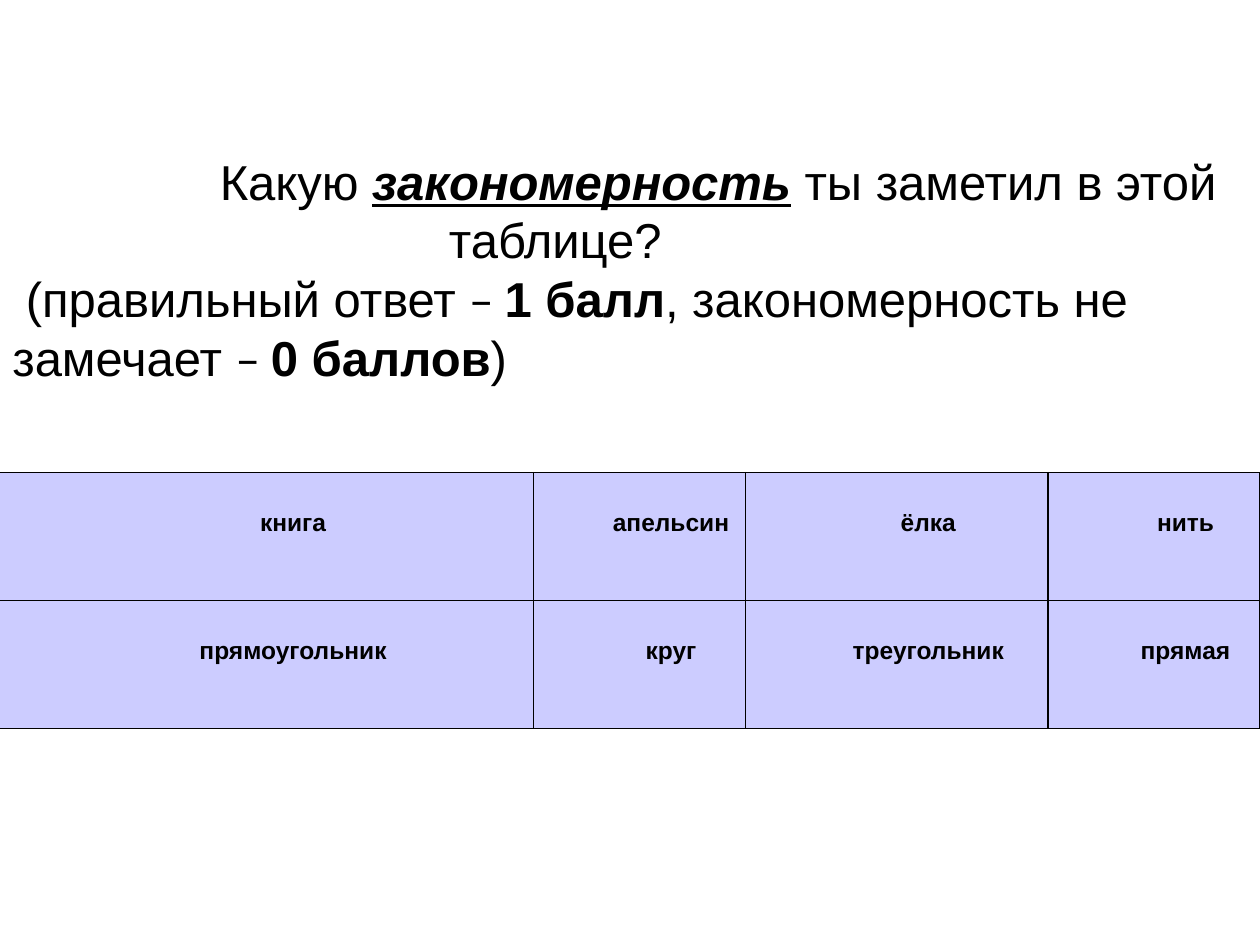
"""Build a slide with a question and a table of objects and their shapes."""
from typing import NamedTuple

from lxml.etree import SubElement as Sub
from pptx import Presentation as Deck
from pptx.dml.color import RGBColor as Rgb
from pptx.enum.text import MSO_ANCHOR as Anchor, MSO_AUTO_SIZE as Fit, PP_ALIGN as Align
from pptx.oxml.ns import qn
from pptx.util import Pt

BLACK = Rgb(0x00, 0x00, 0x00)
LILAC = Rgb(0xCC, 0xCC, 0xFF)


class Piece(NamedTuple):
    text: str
    size: float = 28
    font: str = "Arial"
    bold: bool = False
    mark: bool = False


class Para(NamedTuple):
    pieces: list[Piece]
    left: float = 0
    first: float = 0
    align: Align = Align.LEFT


DASH = Piece("– ", font="Calibri")
ASK = [
    Para([Piece("Какую "), Piece("закономерность", bold=True, mark=True),
          Piece(" ты заметил в этой таблице?")], left=249.5, first=-131),
    Para([Piece(" (правильный ответ "), DASH, Piece("1 балл", bold=True),
          Piece(", закономерность не замечает "), DASH,
          Piece("0 баллов", bold=True), Piece(")")]),
]
WORDS = [
    ["книга", "апельсин", "ёлка", "нить"],
    ["прямоугольник", "круг", "треугольник", "прямая"],
]
WIDTHS = [311, 121, 173, 121]
HIGH = 73.15


def write(para, data: Para) -> None:
    para.alignment = data.align
    props = para._p.get_or_add_pPr()
    props.set("marL", str(Pt(data.left)))
    props.set("indent", str(Pt(data.first)))
    for piece in data.pieces:
        run = para.add_run()
        run.text = piece.text
        font = run.font
        font.size, font.name = Pt(piece.size), piece.font
        font.bold, font.italic, font.underline = piece.bold, piece.mark, piece.mark
        font.color.rgb = BLACK


def edge(cell) -> None:
    props = cell._tc.get_or_add_tcPr()
    for side in ("lnL", "lnR", "lnT", "lnB"):
        line = Sub(props, qn(f"a:{side}"), w=str(Pt(1)))
        Sub(Sub(line, qn("a:solidFill")), qn("a:srgbClr"), val=str(BLACK))


def fill(cell, word: str) -> None:
    edge(cell)
    cell.fill.solid()
    cell.fill.fore_color.rgb = LILAC
    cell.margin_left = cell.margin_right = Pt(5)
    cell.margin_top, cell.margin_bottom = Pt(18.5), Pt(0)
    para = cell.text_frame.paragraphs[0]
    para.line_spacing = 1.15
    write(para, Para([Piece(word, size=14, bold=True)], left=36, align=Align.CENTER))


def grid(slide) -> None:
    rows = len(WORDS)
    table = slide.shapes.add_table(rows, len(WIDTHS), Pt(-6), Pt(270),
                                   Pt(sum(WIDTHS)), Pt(HIGH * rows)).table
    table.first_row = table.horz_banding = False
    for col, width in zip(table.columns, WIDTHS):
        col.width = Pt(width)
    for row, words in zip(table.rows, WORDS):
        row.height = Pt(HIGH)
        for cell, word in zip(row.cells, words):
            fill(cell, word)


def title(slide) -> None:
    frame = slide.shapes.add_textbox(Pt(0), Pt(82), Pt(720), Pt(143)).text_frame
    frame.word_wrap = True
    frame.auto_size = Fit.SHAPE_TO_FIT_TEXT
    frame.vertical_anchor = Anchor.MIDDLE
    for num, data in enumerate(ASK):
        write(frame.add_paragraph() if num else frame.paragraphs[0], data)


def main() -> None:
    deck = Deck()
    deck.slide_width, deck.slide_height = Pt(720), Pt(540)
    slide = deck.slides.add_slide(deck.slide_layouts[6])
    grid(slide)
    title(slide)
    deck.save("out.pptx")


if __name__ == "__main__":
    main()
